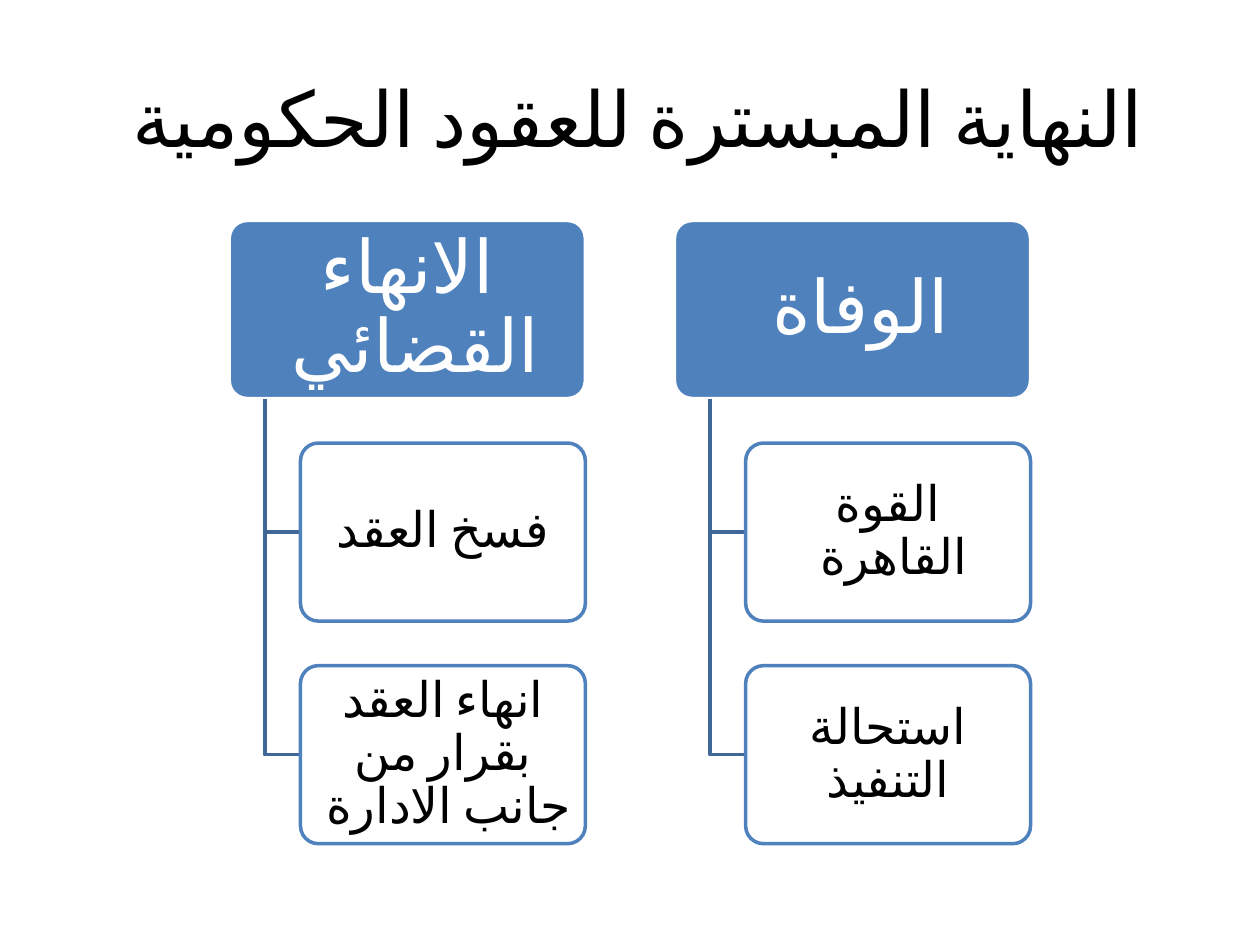
from lxml import etree
from pptx import Presentation
from pptx import util as u
from pptx.dml.color import RGBColor
from pptx.enum import shapes, text
from pptx.oxml.ns import qn

# Content: columns from left to right, each a heading and its items
TITLE = "النهاية المبسترة للعقود الحكومية "
COLUMNS = [
    ("الانهاء القضائي ", ["فسخ العقد", "انهاء العقد بقرار من جانب الادارة "]),
    ("الوفاة ", ["القوة القاهرة ", "استحالة التنفيذ"]),
]

THEME = {
    "font": "Calibri",
    "title": 44, "head": 42, "item": 28,
    "black": "000000", "white": "FFFFFF", "blue": "4F81BD", "link": "3F6797",
    "line": 2,
}

# Layout in points, all derived from the heading width
LEFT, TOP, HEAD_W = 131, 126, 203.5
BOX_H = HEAD_W / 2
COL_STEP, ROW_STEP = HEAD_W * 1.25, BOX_H * 1.25
TRUNK, INDENT = HEAD_W * 0.1, HEAD_W * 0.2


def color(name):
    return RGBColor.from_string(THEME[name])


def write(sp, words, size, ink, spacing=1.0):
    tf = sp.text_frame
    tf.word_wrap = True
    tf.vertical_anchor = text.MSO_ANCHOR.MIDDLE
    p = tf.paragraphs[0]
    p.text = words
    p.alignment = text.PP_ALIGN.CENTER
    p.line_spacing = spacing
    p._p.get_or_add_pPr().set("rtl", "1")
    r = p.runs[0]
    r.font.name, r.font.size = THEME["font"], u.Pt(THEME[size])
    r.font.color.rgb = color(ink)
    # Arabic takes its typeface and language from the complex-script settings
    rPr = r._r.get_or_add_rPr()
    rPr.set("lang", "ar-SA")
    etree.SubElement(rPr, qn("a:cs")).set("typeface", THEME["font"])


def outline(sp, ink):
    sp.shadow.inherit = False
    sp.line.color.rgb = color(ink)
    sp.line.width = u.Pt(THEME["line"])


def box(s, x, y, w, words, size, fill, line, ink, inset):
    sp = s.shapes.add_shape(shapes.MSO_SHAPE.ROUNDED_RECTANGLE,
                            u.Pt(x), u.Pt(y), u.Pt(w), u.Pt(BOX_H))
    sp.adjustments[0] = 0.1
    sp.fill.solid()
    sp.fill.fore_color.rgb = color(fill)
    outline(sp, line)
    tf = sp.text_frame
    tf.margin_left = tf.margin_right = u.Pt(inset)
    tf.margin_top = tf.margin_bottom = u.Pt(inset * 2 / 3)
    write(sp, words, size, ink, 0.9)
    return sp


def elbow(s, x, y, end_x, end_y):
    fb = s.shapes.build_freeform(u.Pt(x), u.Pt(y))
    fb.add_line_segments([(u.Pt(x), u.Pt(end_y)), (u.Pt(end_x), u.Pt(end_y))],
                         close=False)
    sp = fb.convert_to_shape()
    sp.fill.background()
    outline(sp, "link")


def main():
    prs = Presentation()
    prs.slide_width, prs.slide_height = u.Pt(720), u.Pt(540)
    s = prs.slides.add_slide(prs.slide_layouts[6])

    # Title
    title = s.shapes.add_textbox(u.Pt(36), u.Pt(21.6), u.Pt(648), u.Pt(90))
    write(title, TITLE, "title", "black")

    # Hierarchy columns
    for col, (head, items) in enumerate(COLUMNS):
        x = LEFT + col * COL_STEP
        box(s, x, TOP, HEAD_W, head, "head", "blue", "white", "white", 6.3)
        for row, item in enumerate(items, 1):
            y = TOP + row * ROW_STEP
            elbow(s, x + TRUNK, TOP + BOX_H, x + INDENT, y + BOX_H / 2)
            sp = box(s, x + INDENT, y, HEAD_W - INDENT, item,
                     "item", "white", "blue", "black", 4.2)
            # Item fill is 90% opaque
            clr = sp._element.spPr.find(qn("a:solidFill"))[0]
            etree.SubElement(clr, qn("a:alpha")).set("val", "90000")

    prs.save("out.pptx")


if __name__ == "__main__":
    main()
